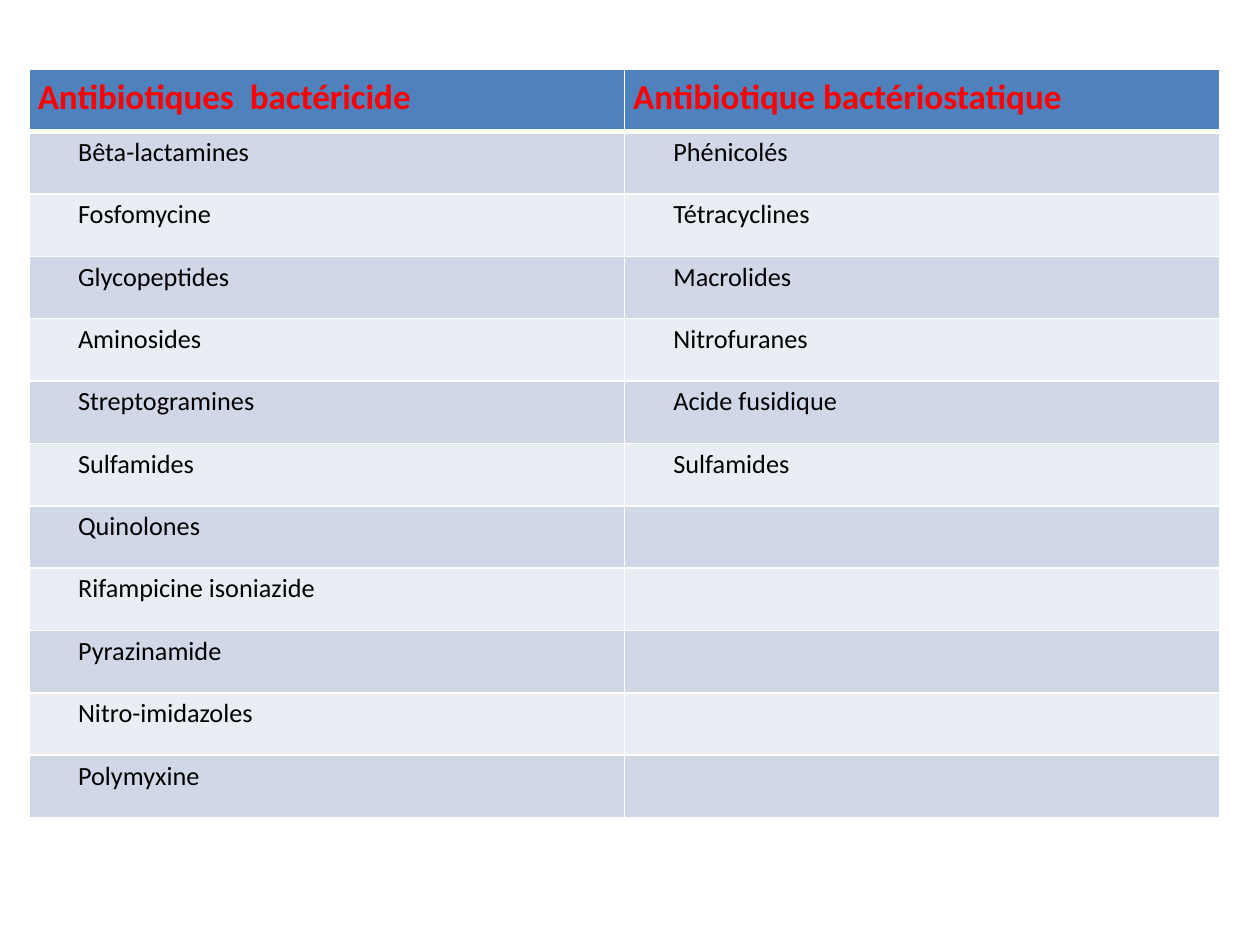
from itertools import zip_longest

from lxml import etree
from pptx import Presentation
from pptx.dml.color import RGBColor
from pptx.enum.text import PP_ALIGN
from pptx.oxml.ns import qn
from pptx.util import Inches, Pt

JUSTIFY, LEFT = PP_ALIGN.JUSTIFY, PP_ALIGN.LEFT

WHITE = RGBColor(0xFF, 0xFF, 0xFF)
BLACK = RGBColor(0x00, 0x00, 0x00)
RED = RGBColor(0xFF, 0x00, 0x00)
BLUE = RGBColor(0x4F, 0x81, 0xBD)
BANDS = (RGBColor(0xD0, 0xD8, 0xE8), RGBColor(0xE9, 0xED, 0xF4))

HEADERS = ("Antibiotiques  bactéricide", "Antibiotique bactériostatique")
BACTERICIDAL = (
    "Bêta-lactamines", "Fosfomycine", "Glycopeptides", "Aminosides",
    "Streptogramines", "Sulfamides", "Quinolones", "Rifampicine isoniazide",
    "Pyrazinamide", "Nitro-imidazoles", "Polymyxine",
)
BACTERIOSTATIC = (
    "Phénicolés", "Tétracyclines", "Macrolides", "Nitrofuranes",
    "Acide fusidique", "Sulfamides",
)


class SlideBuilder:
    font = "Calibri"
    line_spacing = 1.15

    def __init__(self, slide):
        self.slide = slide

    def text(self, cell, text, size, color, bold, align, indent):
        cell.margin_left, cell.margin_right = Inches(indent), Inches(0.07)
        cell.margin_top = cell.margin_bottom = 0
        p = cell.text_frame.paragraphs[0]
        p.alignment = align
        p.line_spacing = self.line_spacing
        r = p.add_run()
        r.text = text
        r.font.name = self.font
        r.font.size = Pt(size)
        r.font.bold = bold
        r.font.color.rgb = color

    def borders(self, cell, top, bottom):
        # Border lines must come before the fill in the cell properties
        tc_pr = cell._tc.get_or_add_tcPr()
        widths = {"a:lnL": 1, "a:lnR": 1, "a:lnT": top, "a:lnB": bottom}
        for i, (tag, width) in enumerate(widths.items()):
            ln = etree.Element(qn(tag), w=str(Pt(width)))
            fill = etree.SubElement(ln, qn("a:solidFill"))
            etree.SubElement(fill, qn("a:srgbClr"), val=str(WHITE))
            tc_pr.insert(i, ln)

    def table(self, rows, left, top, width, height):
        table = self.slide.shapes.add_table(
            len(rows), len(rows[0]), Inches(left), Inches(top),
            Inches(width), Inches(height)).table
        for i, row in enumerate(rows):
            header = i == 0
            for j, text in enumerate(row):
                cell = table.cell(i, j)
                cell.fill.solid()
                cell.fill.fore_color.rgb = BLUE if header else BANDS[(i - 1) % 2]
                self.borders(cell, top=3 if i == 1 else 1, bottom=3 if header else 1)
                if header:
                    self.text(cell, text, 20, RED, True, JUSTIFY, 0.07)
                elif text:
                    self.text(cell, text, 15, BLACK, False, LEFT, 0.39)


def main():
    prs = Presentation()
    prs.slide_width, prs.slide_height = Inches(10), Inches(7.5)
    s = SlideBuilder(prs.slides.add_slide(prs.slide_layouts[6]))

    # Antibiotic classes by type of action
    classes = zip_longest(BACTERICIDAL, BACTERIOSTATIC, fillvalue="")
    s.table([HEADERS, *classes], 0.23, 0.55, 9.45, 5.94)

    prs.save("out.pptx")


if __name__ == "__main__":
    main()
